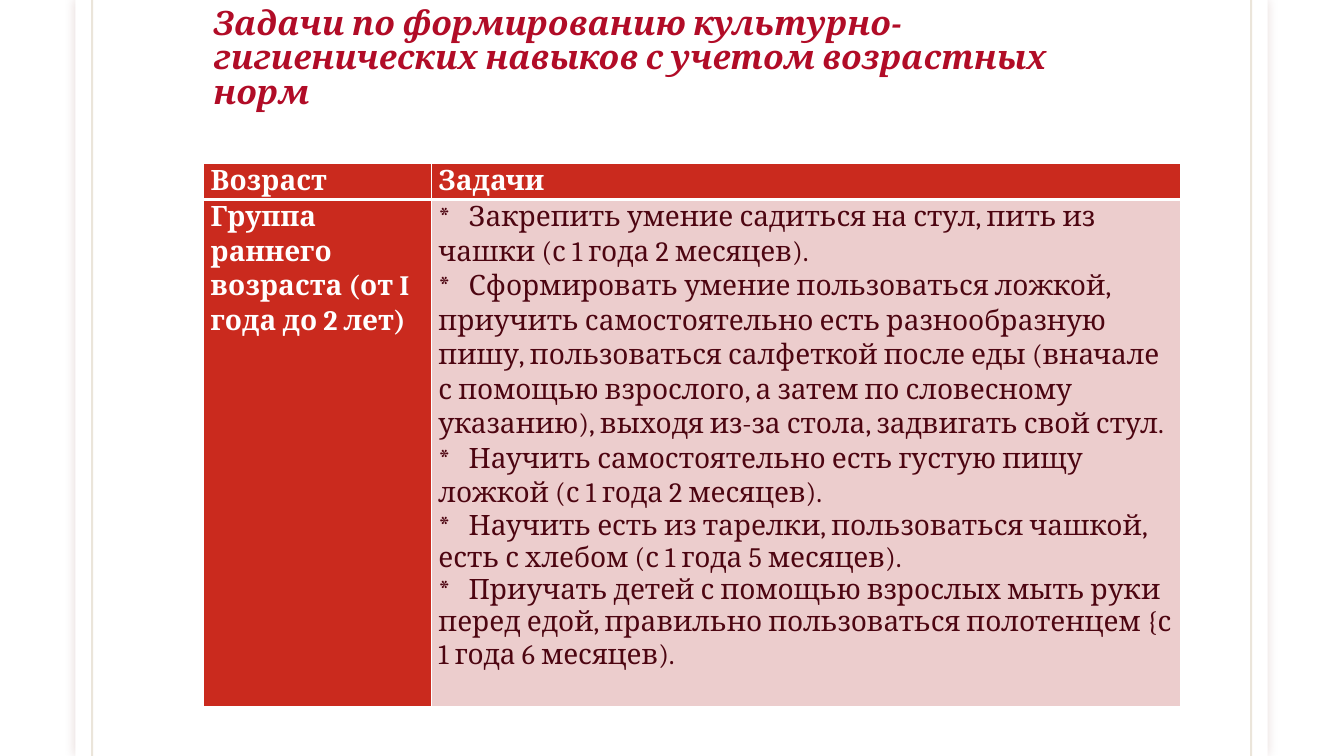
import pptx
import pptx.dml.color
import pptx.enum.shapes
import pptx.enum.text
import pptx.oxml
import pptx.oxml.ns
import pptx.util
from lxml import etree
from pptx.util import Cm

COLORS = {
    "paper": "FFFFFF",
    "shadow": "65150F",
    "rule": "79540B",
    "title": "B10C27",
    "red": "CA2A1E",
    "pink": "ECCDCD",
    "task": "4D0511",
}
FONT = "Cambria"
TITLE = "Задачи по формированию культурно-гигиенических навыков с учетом возрастных норм"
HEADINGS = ["Возраст", "Задачи"]
AGE_GROUP = "Группа раннего возраста (от I года до 2 лет)"
# Each task with its line spacing
TASKS = [
    ("Закрепить умение садиться на стул, пить из чашки (с 1 года 2 месяцев).", 1.07),
    ("Сформировать умение пользоваться ложкой, приучить самостоятельно есть "
     "разнообразную пишу, пользоваться салфеткой после еды (вначале с помощью "
     "взрослого, а затем по словесному указанию), выходя из-за стола, "
     "задвигать свой стул.", 1.07),
    ("Научить самостоятельно есть густую пищу ложкой (с 1 года 2 месяцев).", 1.07),
    ("Научить есть из тарелки, пользоваться чашкой, есть с хлебом "
     "(с 1 года 5 месяцев).", 1.0),
    ("Приучать детей с помощью взрослых мыть руки перед едой, правильно "
     "пользоваться полотенцем {с 1 года 6 месяцев).", 1.0),
]


def rgb(name):
    return pptx.dml.color.RGBColor.from_string(COLORS[name])


def add_xml(parent, tag, **attributes):
    child = etree.SubElement(parent, pptx.oxml.ns.qn(tag))
    for key, value in attributes.items():
        child.set(key, str(value))
    return child


def add_faint_color(parent, name):
    """Add a colour of 15 % opacity."""
    color = add_xml(parent, "a:srgbClr", val=COLORS[name])
    add_xml(color, "a:alpha", val=15000)


def add_run(paragraph, text, size, color, bold=False, italic=False):
    run = paragraph.add_run()
    run.text = text
    run.font.name = FONT
    run.font.size = pptx.util.Pt(size)
    run.font.bold = bold
    run.font.italic = italic
    run.font.color.rgb = rgb(color)


def add_page(slide, left, top, width, height):
    """Draw the white sheet with its soft shadow and two side rules."""
    sheet = slide.shapes.add_shape(
        pptx.enum.shapes.MSO_SHAPE.RECTANGLE, left, top, width, height)
    sheet.fill.solid()
    sheet.fill.fore_color.rgb = rgb("paper")
    sheet.line.fill.background()
    sheet.shadow.inherit = False
    effects = sheet.element.spPr.find(pptx.oxml.ns.qn("a:effectLst"))
    shadow = add_xml(effects, "a:outerShdw", blurRad=pptx.util.Pt(7), dist=0,
                     algn="ctr", rotWithShape=0)
    add_faint_color(shadow, "shadow")

    margin = Cm(0.42)
    for x in (left + margin, left + width - margin):
        rule = slide.shapes.add_connector(
            pptx.enum.shapes.MSO_CONNECTOR.STRAIGHT, x, top, x, top + height)
        rule.line.width = pptx.util.Pt(1.5)
        rule_fill = add_xml(rule.line._get_or_add_ln(), "a:solidFill")
        add_faint_color(rule_fill, "rule")
        add_xml(rule.element.spPr, "a:effectLst")


def add_title(slide, left, top, width, height):
    frame = slide.shapes.add_textbox(left, top, width, height).text_frame
    frame.word_wrap = True
    frame.vertical_anchor = pptx.enum.text.MSO_ANCHOR.BOTTOM
    paragraph = frame.paragraphs[0]
    paragraph.line_spacing = 0.85
    add_run(paragraph, TITLE, 24, "title", bold=True, italic=True)


def style_cell(cell, fill, top, bottom):
    """Set insets, white borders (top and bottom widths in points) and fill."""
    cell.margin_left = cell.margin_right = Cm(0.18)
    cell.margin_top = cell.margin_bottom = 0
    properties = cell._tc.get_or_add_tcPr()
    for side, width in (("L", 1), ("R", 1), ("T", top), ("B", bottom)):
        border = add_xml(properties, f"a:ln{side}", w=pptx.util.Pt(width))
        border_fill = add_xml(border, "a:solidFill")
        add_xml(border_fill, "a:srgbClr", val=COLORS["paper"])
    cell.fill.solid()
    cell.fill.fore_color.rgb = rgb(fill)


def add_label(cell, text):
    paragraph = cell.text_frame.paragraphs[0]
    paragraph.line_spacing = 1.07
    add_run(paragraph, text, 20, "paper", bold=True)


def add_tasks(cell):
    frame = cell.text_frame
    for index, (task, spacing) in enumerate(TASKS):
        paragraph = frame.add_paragraph() if index else frame.paragraphs[0]
        paragraph.line_spacing = spacing
        tabs = add_xml(paragraph._p.get_or_add_pPr(), "a:tabLst")
        add_xml(tabs, "a:tab", pos=Cm(0.76), algn="l")
        add_run(paragraph, f"*\t{task}", 20, "task")


def add_task_table(slide, left, top, width, height):
    table = slide.shapes.add_table(2, 2, left, top, width, height).table
    age_width, header_height = Cm(5.74), Cm(0.85)
    table.columns[0].width = age_width
    table.columns[1].width = width - age_width
    table.rows[0].height = header_height
    table.rows[1].height = height - header_height

    for column, heading in enumerate(HEADINGS):
        header = table.cell(0, column)
        style_cell(header, "red", 1, 3)
        add_label(header, heading)
    age, tasks = table.cell(1, 0), table.cell(1, 1)
    style_cell(age, "red", 3, 1)
    add_label(age, AGE_GROUP)
    style_cell(tasks, "pink", 3, 1)
    add_tasks(tasks)


def main():
    deck = pptx.Presentation()
    deck.slide_width, deck.slide_height = Cm(33.87), Cm(19.05)
    slide = deck.slides.add_slide(deck.slide_layouts[6])
    add_page(slide, Cm(1.9), 0, Cm(30.05), deck.slide_height)
    add_title(slide, Cm(5.13), Cm(0.89), Cm(23.6), Cm(2.03))
    add_task_table(slide, Cm(5.13), Cm(4.12), Cm(24.61), Cm(13.62))
    deck.save("out.pptx")


if __name__ == "__main__":
    main()
